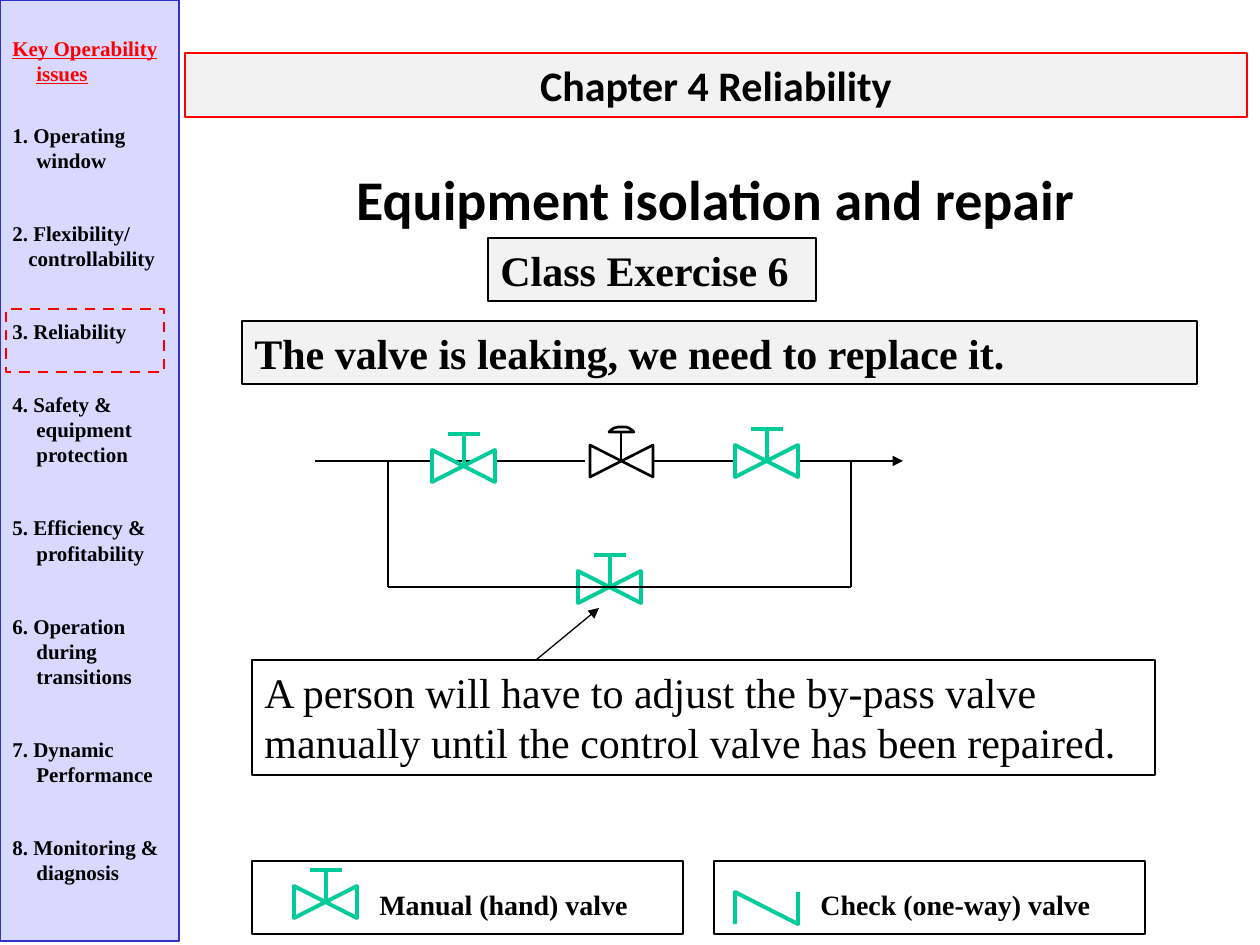
from lxml import etree
from pptx import Presentation
from pptx.dml.color import RGBColor
from pptx.enum.dml import MSO_LINE
from pptx.enum.shapes import MSO_CONNECTOR, MSO_SHAPE
from pptx.enum.text import MSO_ANCHOR, PP_ALIGN
from pptx.oxml.ns import qn
from pptx.util import Pt

PX = 914400 / 126
RECT = MSO_SHAPE.RECTANGLE
STRAIGHT = MSO_CONNECTOR.STRAIGHT
DASH = MSO_LINE.DASH
TOP = MSO_ANCHOR.TOP
LEFT, CENTER = PP_ALIGN.LEFT, PP_ALIGN.CENTER
SERIF, SANS = "Times New Roman", "Calibri"
BLACK = RGBColor(0x00, 0x00, 0x00)
WHITE = RGBColor(0xFF, 0xFF, 0xFF)
RED = RGBColor(0xFF, 0x00, 0x00)
GREEN = RGBColor(0x00, 0xCC, 0x99)
GRAY = RGBColor(0xF2, 0xF2, 0xF2)
LILAC = RGBColor(0xD9, 0xD9, 0xFF)
BLUE = RGBColor(0x33, 0x33, 0xCC)

prs = Presentation()
prs.slide_width = round(1260 * PX)
prs.slide_height = round(945 * PX)
slide = prs.slides.add_slide(prs.slide_layouts[6])
shapes = slide.shapes


def add_box(x, y, w, h, text="", size=24, font=SERIF, bold=True,
            fill=None, edge=BLACK, align=LEFT):
    area = [round(v * PX) for v in (x, y, w, h)]
    if edge is None:
        box = shapes.add_textbox(*area)
    else:
        box = shapes.add_shape(RECT, *area)
        box.shadow.inherit = False
        box.line.color.rgb = edge
        box.line.width = Pt(0.75)
        if fill is None:
            box.fill.background()
        else:
            box.fill.solid()
            box.fill.fore_color.rgb = fill
    frame = box.text_frame
    frame.word_wrap = True
    frame.vertical_anchor = TOP
    frame.text = text
    for para in frame.paragraphs:
        para.alignment = align
        for run in para.runs:
            run.font.size = Pt(size)
            run.font.name = font
            run.font.bold = bold
            run.font.color.rgb = BLACK
    return box


def add_line(x1, y1, x2, y2, color=BLACK, width=0.75, arrow=False):
    ends = [round(v * PX) for v in (x1, y1, x2, y2)]
    line = shapes.add_connector(STRAIGHT, *ends)
    line.line.color.rgb = color
    line.line.width = Pt(width)
    props = line._element.spPr
    if arrow:
        etree.SubElement(props.find(qn("a:ln")), qn("a:tailEnd"), type="triangle")
    etree.SubElement(props, qn("a:effectLst"))


# Main pipe
add_line(315, 461, 585, 461)
add_line(651, 461, 903, 461, arrow=True)

# Legend frames
for x in (252, 714):
    add_box(x, 861, 431, 73)

# Valve outlines: points, colour, line width, closed
spots = [(294, 886), (578, 571), (432, 450), (735, 445)]
bodies = [(590, 445, BLACK, 1.5)] + [(x, y, GREEN, 2.25) for x, y in spots]
forms = [([(x, y), (x + 63, y + 32), (x + 63, y), (x, y + 32)], color, width, True)
         for x, y, color, width in bodies]
dome = [(609, 432), (611, 430), (614, 428), (618, 427), (622, 427),
        (626, 427), (629, 428), (632, 430), (634, 432)]
check = [(735, 924), (735, 892), (798, 924), (798, 892)]
forms += [(dome, BLACK, 1.5, True), (check, GREEN, 2.25, False)]
for points, color, width, closed in forms:
    path = shapes.build_freeform(*points[0], scale=PX)
    path.add_line_segments(points[1:], close=closed)
    form = path.convert_to_shape()
    form.shadow.inherit = False
    form.line.color.rgb = color
    form.line.width = Pt(width)
    if closed:
        form.fill.solid()
        form.fill.fore_color.rgb = WHITE
    else:
        form.fill.background()

# Valve stems and handles
add_line(621, 460, 621, 432, width=1.5)
for x, y in spots:
    add_line(x + 32, y + 16, x + 32, y - 16, GREEN, 2.25)
    add_line(x + 16, y - 16, x + 48, y - 16, GREEN, 2.25)

# By-pass pipe
corners = [(388, 461), (388, 587), (851, 587), (851, 461)]
for start, end in zip(corners, corners[1:]):
    add_line(*start, *end)

# Statement, callout and legend labels
add_box(242, 321, 955, 63, "The valve is leaking, we need to replace it.", fill=GRAY)
add_box(252, 660, 903, 115, "A person will have to adjust the by-pass valve manually "
        "until the control valve has been repaired.", bold=False)
add_line(536, 660, 599, 608, arrow=True)
add_box(367, 881, 305, 47, "Manual (hand) valve", 16, edge=None)
add_box(808, 881, 410, 47, "Check (one-way) valve", 16, edge=None)

# Sidebar: text and space before in points
topics = [
    ("Key Operability issues", 0),
    ("1. Operating window", 21),
    ("2. Flexibility/", 27.3),
    ("controllability", 0),
    ("3. Reliability", 27.3),
    ("4. Safety & equipment protection", 27.3),
    ("5. Efficiency & profitability", 27.3),
    ("6. Operation during transitions", 27.3),
    ("7. Dynamic Performance", 27.3),
    ("8. Monitoring & diagnosis", 27.3),
]
side = add_box(0, 0, 179, 941, "\n".join(name for name, gap in topics), 12,
               fill=LILAC, edge=BLUE)
side.text_frame.margin_top = round(35 * PX)
for para, (name, gap) in zip(side.text_frame.paragraphs, topics):
    para.space_before = Pt(gap)
    left, hang = (16, 0) if name == "controllability" else (24, -24)
    props = para._p.get_or_add_pPr()
    props.set("marL", str(round(left * PX)))
    props.set("indent", str(round(hang * PX)))
head = side.text_frame.paragraphs[0].runs[0].font
head.color.rgb = RED
head.underline = True

# Marker on the current topic
mark = add_box(6, 309, 158, 63, edge=RED)
mark.line.width = Pt(1.5)
mark.line.dash_style = DASH

# Headings
add_box(185, 53, 1062, 64, "Chapter 4 Reliability", font=SANS, fill=GRAY,
        edge=RED, align=CENTER)
add_box(311, 158, 809, 81, "Equipment isolation and repair", 32, SANS,
        edge=None, align=CENTER)
add_box(488, 238, 328, 63, "Class Exercise 6", fill=GRAY)

prs.save("out.pptx")
